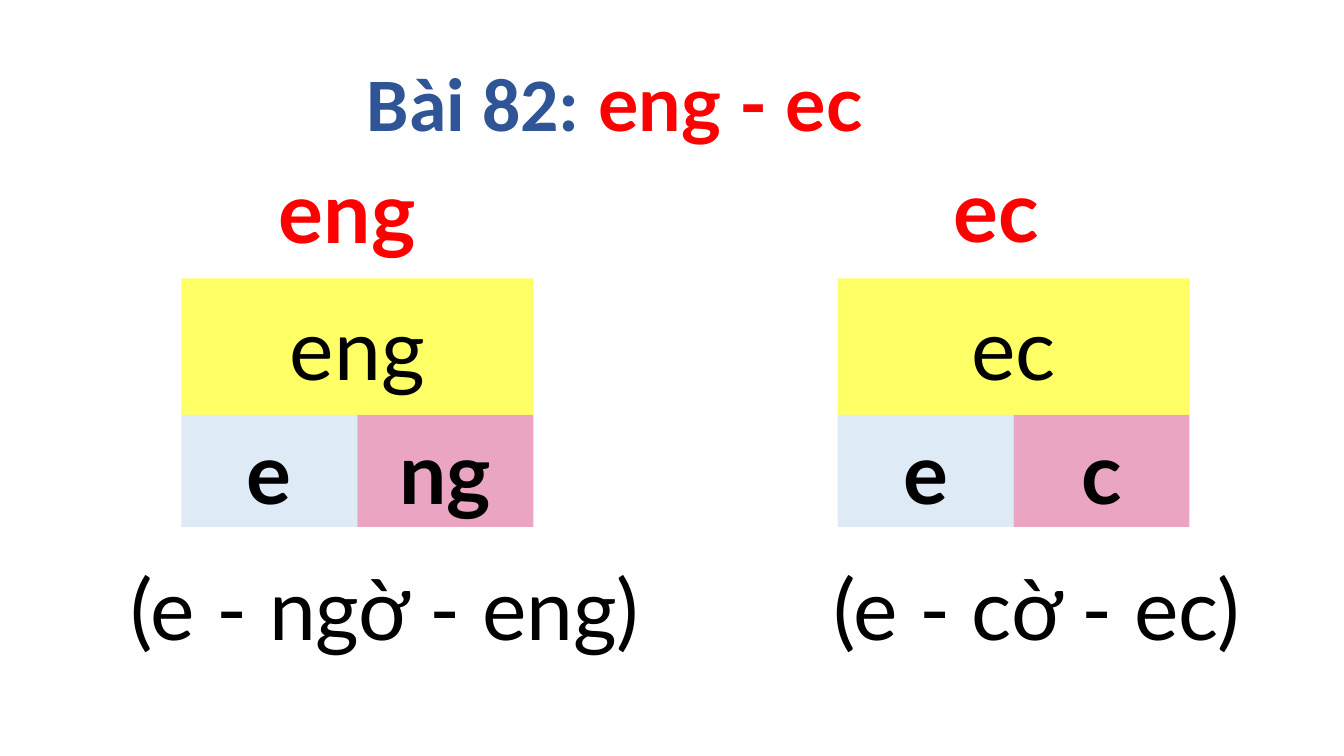
from pptx import Presentation
from pptx.dml.color import RGBColor
from pptx.enum.shapes import MSO_SHAPE
from pptx.enum.text import MSO_ANCHOR, MSO_AUTO_SIZE, PP_ALIGN
from pptx.util import Pt

RED = RGBColor(0xFF, 0x00, 0x00)
BLUE = RGBColor(0x2F, 0x55, 0x97)
BLACK = RGBColor(0x00, 0x00, 0x00)
YELLOW = RGBColor(0xFF, 0xFF, 0x66)
PALE_BLUE = RGBColor(0xDE, 0xEB, 0xF7)
PINK = RGBColor(0xE9, 0xA5, 0xC2)


def format_font(font, color, bold, size=60, name="Lato"):
    font.name = name
    font.size = Pt(size)
    font.bold = bold
    font.color.rgb = color


def add_label(text, left, top, width, color, bold, align):
    box = slide.shapes.add_textbox(Pt(left), Pt(top), Pt(width), Pt(80))
    frame = box.text_frame
    frame.word_wrap = True
    frame.auto_size = MSO_AUTO_SIZE.SHAPE_TO_FIT_TEXT
    frame.text = text
    para = frame.paragraphs[0]
    para.alignment = align
    format_font(para.runs[0].font, color, bold)


deck = Presentation()
deck.slide_width, deck.slide_height = Pt(960), Pt(540)
slide = deck.slides.add_slide(deck.slide_layouts[5])

# Lesson title
title = slide.shapes.title
title.left, title.top, title.width, title.height = Pt(254.9), Pt(36), Pt(474.5), Pt(72.7)
title_frame = title.text_frame
title_frame.word_wrap = True
title_frame.auto_size = MSO_AUTO_SIZE.SHAPE_TO_FIT_TEXT
title_frame.vertical_anchor = MSO_ANCHOR.TOP
title_para = title_frame.paragraphs[0]
title_para.alignment = PP_ALIGN.LEFT
for text, color, name in [("Bài 82:", BLUE, "Calibri"), (" eng - ec", RED, "Lato")]:
    span = title_para.add_run()
    span.text = text
    format_font(span.font, color, True, 54, name)

# Rhymes: rhyme, first sound, last sound, spelling,
# heading left and top, block left, spelling left and width
RHYMES = [
    ("eng", "e", "ng", "(e - ngờ - eng)", 192.2, 110.2, 129.6, 49.7, 450.7),
    ("ec", "e", "c", "(e - cờ - ec)", 673.9, 109.4, 598.3, 551.5, 378),
]
BLOCK_TOP, RHYME_HEIGHT, SOUND_HEIGHT = 198.8, 97.6, 79.9
BLOCK_WIDTH = 251.4
SOUND_WIDTH = BLOCK_WIDTH / 2
SOUND_TOP = BLOCK_TOP + RHYME_HEIGHT

for (rhyme, first, last, spelling, heading_left, heading_top,
     block_left, spelling_left, spelling_width) in RHYMES:
    add_label(rhyme, heading_left, heading_top, 133.2, RED, True, PP_ALIGN.LEFT)

    # Rhyme on top, its two sounds below
    block = slide.shapes.add_group_shape()
    cells = [
        (rhyme, 0, BLOCK_TOP, BLOCK_WIDTH, RHYME_HEIGHT, YELLOW, False),
        (first, 0, SOUND_TOP, SOUND_WIDTH, SOUND_HEIGHT, PALE_BLUE, True),
        (last, SOUND_WIDTH, SOUND_TOP, SOUND_WIDTH, SOUND_HEIGHT, PINK, True),
    ]
    for text, offset, top, width, height, fill, bold in cells:
        cell = block.shapes.add_shape(MSO_SHAPE.RECTANGLE, Pt(block_left + offset),
                                      Pt(top), Pt(width), Pt(height))
        cell.shadow.inherit = False
        cell.fill.solid()
        cell.fill.fore_color.rgb = fill
        cell.line.fill.background()
        cell.text_frame.text = text
        cell.text_frame.vertical_anchor = MSO_ANCHOR.MIDDLE
        para = cell.text_frame.paragraphs[0]
        para.alignment = PP_ALIGN.CENTER
        format_font(para.runs[0].font, BLACK, bold)

    add_label(spelling, spelling_left, 393.8, spelling_width, BLACK, False, PP_ALIGN.CENTER)

deck.save("out.pptx")
